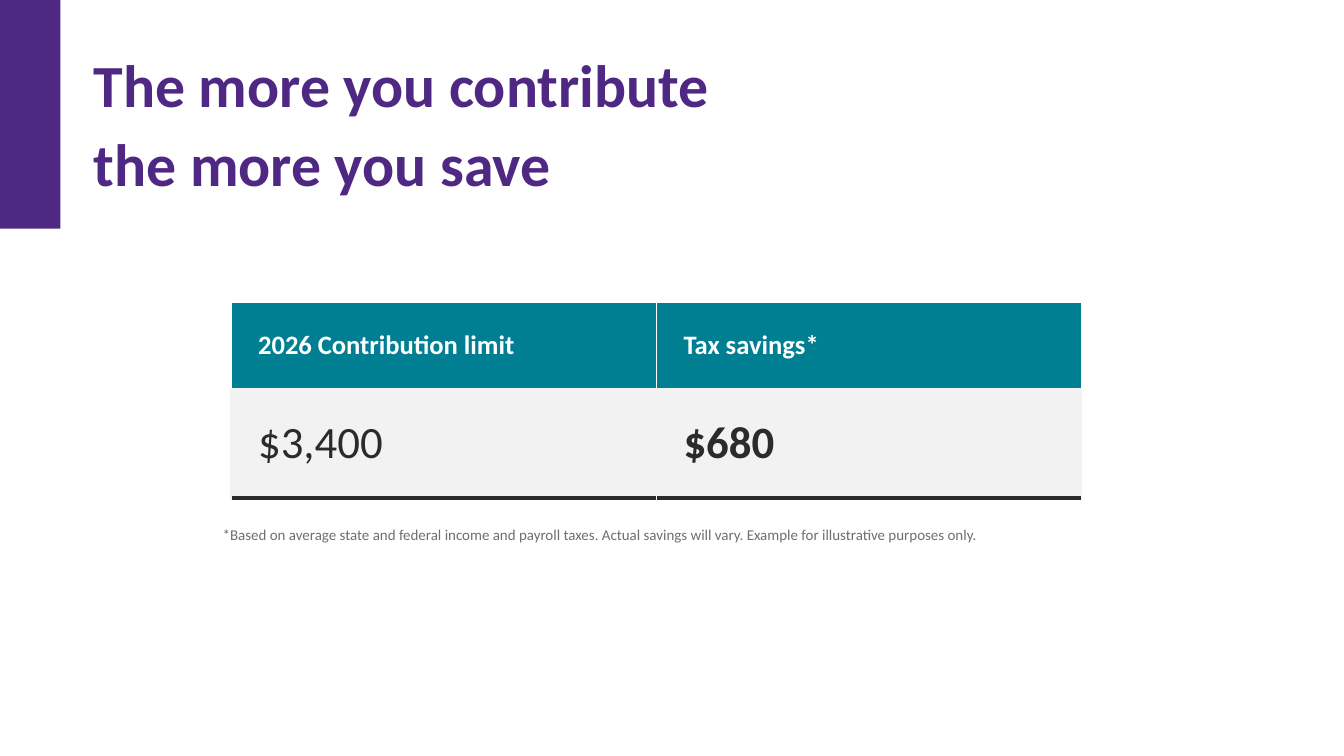
from lxml import etree
from pptx import Presentation
from pptx.dml.color import RGBColor
from pptx.enum.shapes import MSO_SHAPE
from pptx.enum.text import MSO_ANCHOR, PP_ALIGN
from pptx.oxml.ns import qn
from pptx.util import Inches, Pt

RECT = MSO_SHAPE.RECTANGLE
TOP, MIDDLE = MSO_ANCHOR.TOP, MSO_ANCHOR.MIDDLE
LEFT = PP_ALIGN.LEFT

PURPLE, TEAL, WHITE = "4F2883", "007F93", "FFFFFF"
PALE, DARK, GREY = "F2F2F2", "2A2C2C", "6F6F6F"


def color(code):
    """Turn a hex string into a colour."""
    return RGBColor.from_string(code)


class Deck:
    """Holds the style and the current slide."""

    face = "Calibri"
    pad = 0.27

    def __init__(self, show):
        """Add a slide with a title to the show."""
        self.slide = show.slides.add_slide(show.slide_layouts[5])

    def style(self, para, size, code, bold=False):
        """Set the font and alignment of a paragraph."""
        para.alignment = LEFT
        font = para.font
        font.name, font.size, font.bold = self.face, Pt(size), bold
        font.color.rgb = color(code)

    def inset(self, frame, gap):
        """Give a text frame or cell the same margin on each side."""
        frame.margin_left = frame.margin_right = Inches(gap)
        frame.margin_top = frame.margin_bottom = Inches(gap)

    def bar(self, box, code):
        """Draw a plain filled bar."""
        shape = self.slide.shapes.add_shape(RECT, *map(Inches, box))
        shape.shadow.inherit = False
        shape.fill.solid()
        shape.fill.fore_color.rgb = color(code)
        shape.line.fill.background()

    def title(self, box, text):
        """Place and fill the title."""
        shape = self.slide.shapes.title
        shape.left, shape.top, shape.width, shape.height = map(Inches, box)
        frame = shape.text_frame
        self.inset(frame, 0)
        frame.word_wrap = True
        frame.vertical_anchor = TOP
        para = frame.paragraphs[0]
        para.text = text
        para.line_spacing = 1.1
        self.style(para, 42.7, PURPLE, True)

    def note(self, box, text):
        """Add a small grey note."""
        frame = self.slide.shapes.add_textbox(*map(Inches, box)).text_frame
        frame.word_wrap = True
        para = frame.paragraphs[0]
        para.text = text
        self.style(para, 10.7, GREY)

    def edge(self, cell, side, code, width):
        """Draw one border of a cell."""
        props = cell._tc.get_or_add_tcPr()
        line = etree.SubElement(props, qn(f"a:ln{side}"), w=str(Pt(width)))
        fill = etree.SubElement(line, qn("a:solidFill"))
        etree.SubElement(fill, qn("a:srgbClr"), val=code)

    def cell(self, cell, text, size, ink, bold, back, side, base, anchor):
        """Fill and format one table cell."""
        cell.text = text
        self.inset(cell, self.pad)
        cell.vertical_anchor = anchor
        self.style(cell.text_frame.paragraphs[0], size, ink, bold)
        for name in "LRT":
            self.edge(cell, name, side, 1)
        self.edge(cell, "B", *base)
        cell.fill.solid()
        cell.fill.fore_color.rgb = color(back)

    def table(self, box, highs, heads, values):
        """Add a table with a header row and a value row."""
        frame = self.slide.shapes.add_table(2, len(heads), *map(Inches, box))
        grid = frame.table
        for row, high in zip(grid.rows, highs):
            row.height = Inches(high)
        for col, (head, (value, bold)) in enumerate(zip(heads, values)):
            self.cell(grid.cell(0, col), head, 19, WHITE, True, TEAL,
                      WHITE, (PALE, 1), MIDDLE)
            self.cell(grid.cell(1, col), value, 32, DARK, bold, PALE,
                      PALE, (DARK, 3), TOP)


def main():
    """Build and save the slide."""
    show = Presentation()
    show.slide_width, show.slide_height = Inches(13.33), Inches(7.5)
    deck = Deck(show)
    deck.bar((0, 0, 0.6, 2.27), PURPLE)
    deck.title((0.93, 0.4, 11.85, 1.52),
               "The more you contribute\vthe more you save")
    deck.table((2.29, 3, 8.44, 1.91), (0.84, 1.07),
               ("2026 Contribution limit", "Tax savings*"),
               (("$3,400", False), ("$680", True)))
    deck.note((2.11, 5.16, 8.89, 0.28),
              "*Based on average state and federal income and payroll taxes. "
              "Actual savings will vary. "
              "Example for illustrative purposes only.")
    show.save("out.pptx")


if __name__ == "__main__":
    main()
